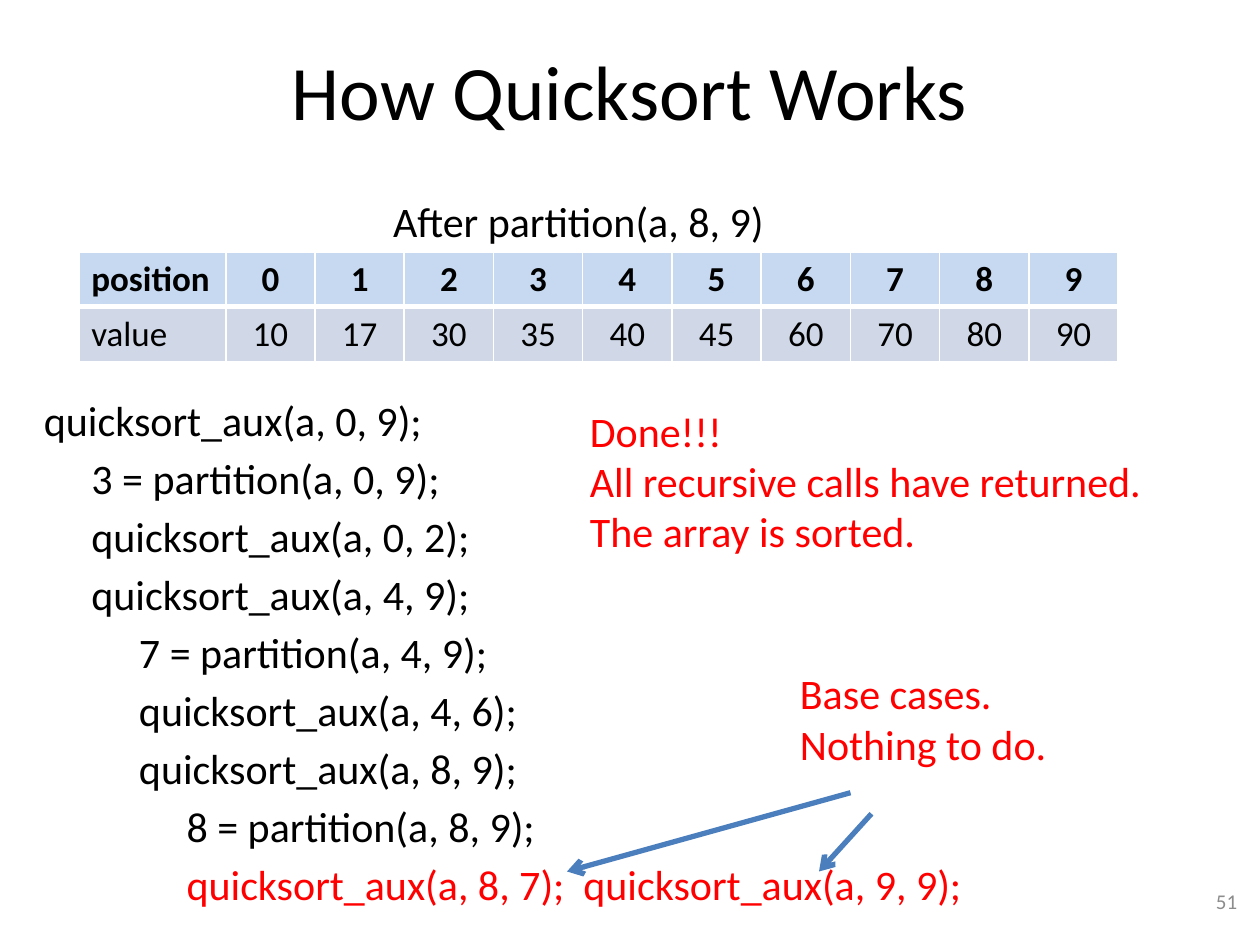
from dataclasses import dataclass

from lxml.etree import SubElement
from pptx import Presentation
from pptx.dml.color import RGBColor
from pptx.enum.shapes import MSO_CONNECTOR as Connector
from pptx.enum.text import MSO_ANCHOR as Anchor, PP_ALIGN as Align
from pptx.oxml.ns import qn
from pptx.util import Inches, Pt


@dataclass(frozen=True)
class Theme:
    font: str = "Calibri"
    text: str = "000000"
    accent: str = "FF0000"
    muted: str = "8C8C8C"
    arrow: str = "4B7EBC"
    border: str = "FFFFFF"
    header_fill: str = "C6D9F1"
    value_fill: str = "D0D8E8"
    title_size: int = 44
    body_size: int = 24
    table_size: int = 20
    number_size: int = 12


THEME = Theme()
GRID_COLUMNS, GRID_ROWS = 120, 90
SLIDE_WIDTH, SLIDE_HEIGHT = Inches(10), Inches(7.5)
INDENT = 4.53

CALLS = [
    (0, "quicksort_aux(a, 0, 9);"),
    (1, "3 = partition(a, 0, 9);"),
    (1, "quicksort_aux(a, 0, 2);"),
    (1, "quicksort_aux(a, 4, 9);"),
    (2, "7 = partition(a, 4, 9);"),
    (2, "quicksort_aux(a, 4, 6);"),
    (2, "quicksort_aux(a, 8, 9);"),
    (3, "8 = partition(a, 8, 9);"),
    (3, "quicksort_aux(a, 8, 7);  quicksort_aux(a, 9, 9);"),
]
SORTED_VALUES = [10, 17, 30, 35, 40, 45, 60, 70, 80, 90]


def across(columns):
    return int(SLIDE_WIDTH * columns / GRID_COLUMNS)


def down(rows):
    return int(SLIDE_HEIGHT * rows / GRID_ROWS)


def place(left, top, width, height):
    return across(left), down(top), across(width), down(height)


def write(paragraph, text, size=THEME.body_size, color=THEME.text, bold=False,
          align=Align.LEFT, level=0, space_before=0):
    paragraph.text = text
    paragraph.alignment = align
    paragraph.space_before = Pt(space_before)
    if level:
        properties = paragraph._p.get_or_add_pPr()
        properties.set("marL", str(across(level * INDENT)))
        properties.set("indent", "0")
    for run in paragraph.runs:
        run.font.name = THEME.font
        run.font.size = Pt(size)
        run.font.bold = bold
        run.font.color.rgb = RGBColor.from_string(color)


def add_title(slide, text, area):
    title = slide.shapes.title
    title.left, title.top, title.width, title.height = place(*area)
    title.text_frame.vertical_anchor = Anchor.MIDDLE
    write(title.text_frame.paragraphs[0], text, size=THEME.title_size,
          align=Align.CENTER)


def add_text(slide, area, lines, wrap=False, anchor=Anchor.TOP, **style):
    frame = slide.shapes.add_textbox(*place(*area)).text_frame
    frame.word_wrap = wrap
    frame.vertical_anchor = anchor
    for index, line in enumerate(lines):
        paragraph = frame.add_paragraph() if index else frame.paragraphs[0]
        write(paragraph, line, **style)
    return frame


def add_calls(slide, area, calls):
    frame = add_text(slide, area, [text for _, text in calls], wrap=True)
    for paragraph, (level, text) in zip(frame.paragraphs, calls):
        color = THEME.accent if text == calls[-1][1] else THEME.text
        write(paragraph, text, color=color, level=level, space_before=4.3)


def set_borders(cell, **widths):
    properties = cell._tc.get_or_add_tcPr()
    for side in "LRTB":
        line = SubElement(properties, qn(f"a:ln{side}"),
                          w=str(Pt(widths.get(side, 1))))
        fill = SubElement(line, qn("a:solidFill"))
        SubElement(fill, qn("a:srgbClr"), val=THEME.border)


def add_array_table(slide, left, top, values):
    label_width, value_width, row_height = 14, 8.5, 5.2
    rows = [
        (["position", *range(len(values))], THEME.header_fill, True, {"B": 3}),
        (["value", *values], THEME.value_fill, False, {"T": 3}),
    ]
    area = place(left, top, label_width + value_width * len(values),
                 row_height * len(rows))
    table = slide.shapes.add_table(len(rows), len(values) + 1, *area).table
    for index, column in enumerate(table.columns):
        column.width = across(value_width if index else label_width)
    for row, (contents, fill, bold, borders) in enumerate(rows):
        for column, content in enumerate(contents):
            cell = table.cell(row, column)
            set_borders(cell, **borders)
            cell.fill.solid()
            cell.fill.fore_color.rgb = RGBColor.from_string(fill)
            write(cell.text_frame.paragraphs[0], str(content),
                  size=THEME.table_size, bold=bold,
                  align=Align.CENTER if column else Align.LEFT)


def add_arrow(slide, start, end):
    arrow = slide.shapes.add_connector(
        Connector.STRAIGHT, across(start[0]), down(start[1]),
        across(end[0]), down(end[1]))
    arrow.line.color.rgb = RGBColor.from_string(THEME.arrow)
    arrow.line.width = Pt(3)
    SubElement(arrow.line._get_or_add_ln(), qn("a:tailEnd"), type="arrow")
    SubElement(arrow._element.spPr, qn("a:effectLst"))


def main():
    presentation = Presentation()
    presentation.slide_width = SLIDE_WIDTH
    presentation.slide_height = SLIDE_HEIGHT
    slide = presentation.slides.add_slide(presentation.slide_layouts[5])

    add_title(slide, "How Quicksort Works", (6, 1, 108, 15))
    add_calls(slide, (3, 37, 108, 47), CALLS)
    add_text(slide, (91, 83.4, 28, 4.8), ["51"], wrap=True,
             anchor=Anchor.MIDDLE, size=THEME.number_size, color=THEME.muted,
             align=Align.RIGHT)
    add_array_table(slide, 7.5, 24, SORTED_VALUES)
    add_text(slide, (36.25, 18, 38, 6), ["After partition(a, 8, 9)"])
    add_text(slide, (75, 63, 26, 11), ["Base cases.", "Nothing to do."],
             color=THEME.accent)
    for start, end in [((81, 75.5), (54, 83)), ((83, 77.5), (78, 83))]:
        add_arrow(slide, start, end)
    add_text(slide, (55, 38, 55.5, 15.75),
             ["Done!!!\nAll recursive calls have returned.",
              "The array is sorted."], color=THEME.accent)
    presentation.save("out.pptx")


if __name__ == "__main__":
    main()
